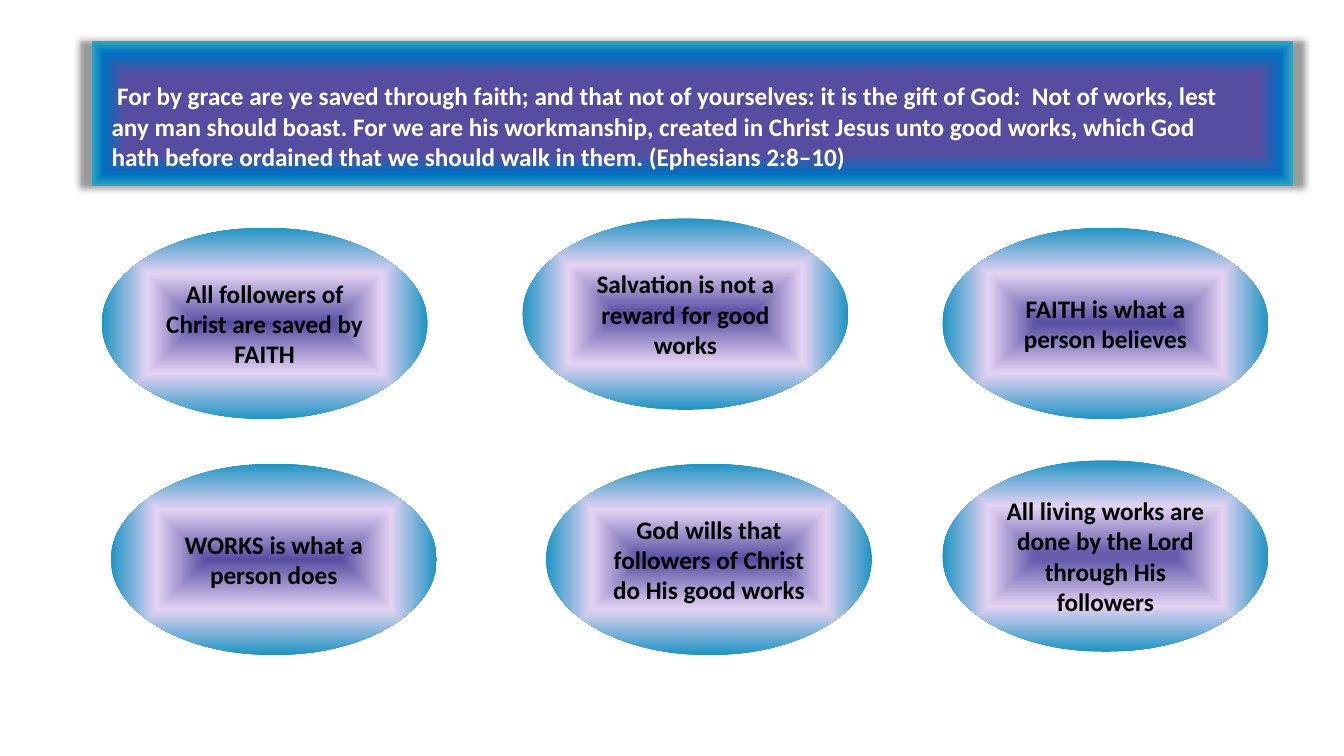
from pptx import Presentation
from pptx.dml.color import RGBColor
from pptx.enum.shapes import MSO_SHAPE as Shape
from pptx.enum.text import MSO_ANCHOR as Anchor, MSO_AUTO_SIZE as Fit, PP_ALIGN as Align
from pptx.oxml import parse_xml
from pptx.oxml.ns import nsdecls
from pptx.util import Inches, Pt

BLACK = RGBColor(0x00, 0x00, 0x00)
WHITE = RGBColor(0xFF, 0xFF, 0xFF)
VIOLET = RGBColor(0x56, 0x4D, 0xA1)
MAUVE = RGBColor(0x66, 0x5C, 0xAB)
LILAC = RGBColor(0xE4, 0xD2, 0xF2)
BLUE = RGBColor(0x00, 0x70, 0xC0)
TEAL = RGBColor(0x2F, 0xA7, 0xC4)
AZURE = RGBColor(0x1F, 0x94, 0xC3)

FRAME = [(55, VIOLET), (83, BLUE), (100, TEAL)]
GLOW = [(0, VIOLET), (52, LILAC), (100, AZURE)]
SOFT = [(4, MAUVE), (52, LILAC), (100, AZURE)]

VERSE = (
    " For by grace are ye saved through faith; and that not of yourselves: "
    "it is the gift of God:  Not of works, lest any man should boast. "
    "For we are his workmanship, created in Christ Jesus unto good works, "
    "which God hath before ordained that we should walk in them. "
    "(Ephesians 2:8–10)"
)

POINTS = [
    (1.21, 2.71, "All followers of Christ are saved by FAITH", GLOW),
    (1.32, 5.52, "WORKS is what a person does", GLOW),
    (6.5, 5.52, "God wills that followers of Christ do His good works", GLOW),
    (6.22, 2.6, "Salvation is not a reward for good works", GLOW),
    (11.22, 5.48, "All living works are done by the Lord through His followers", SOFT),
    (11.22, 2.71, "FAITH is what a person believes", GLOW),
]


class Board:
    font = "Calibri"
    size = Pt(18)
    cols = 16
    rows = 9

    def __init__(self, deck):
        self.slide = deck.slides.add_slide(deck.slide_layouts[6])
        self.col = deck.slide_width / self.cols
        self.row = deck.slide_height / self.rows

    def place(self, x, y, w, h):
        return (round(x * self.col), round(y * self.row),
                round(w * self.col), round(h * self.row))

    def letter(self, frame, text, color, align):
        frame.word_wrap = True
        par = frame.paragraphs[0]
        par.alignment = align
        run = par.add_run()
        run.text = text
        run.font.name = self.font
        run.font.size = self.size
        run.font.bold = True
        run.font.color.rgb = color

    def shade(self, shape, stops):
        marks = "".join(
            f'<a:gs pos="{pos * 1000}"><a:srgbClr val="{color}"/></a:gs>'
            for pos, color in stops)
        shape.fill.background()
        props = shape.element.spPr
        blank = props.find("{*}noFill")
        props.replace(blank, parse_xml(
            f'<a:gradFill {nsdecls("a")} rotWithShape="1"><a:gsLst>{marks}</a:gsLst>'
            '<a:path path="shape"><a:fillToRect l="50000" t="50000" r="50000" b="50000"/>'
            '</a:path></a:gradFill>'))

    def form(self, kind, box, stops):
        shape = self.slide.shapes.add_shape(kind, *self.place(*box))
        shape.shadow.inherit = False
        shape.line.fill.background()
        self.shade(shape, stops)
        return shape

    def banner(self, box):
        shape = self.form(Shape.RECTANGLE, box, FRAME)
        shape.element.spPr.find("{*}effectLst").append(parse_xml(
            f'<a:outerShdw {nsdecls("a")} blurRad="{Pt(5)}" sx="102000" sy="102000" '
            f'algn="ctr" rotWithShape="0"><a:srgbClr val="{BLACK}">'
            '<a:alpha val="40000"/></a:srgbClr></a:outerShdw>'))

    def oval(self, x, y, text, stops):
        shape = self.form(Shape.OVAL, (x, y, 3.88, 2.28), stops)
        shape.text_frame.vertical_anchor = Anchor.MIDDLE
        self.letter(shape.text_frame, text, BLACK, Align.CENTER)

    def verse(self, box, text):
        frame = self.slide.shapes.add_textbox(*self.place(*box)).text_frame
        self.letter(frame, text, WHITE, Align.LEFT)
        frame.auto_size = Fit.SHAPE_TO_FIT_TEXT


def main():
    deck = Presentation()
    deck.slide_width = Inches(13.33)
    deck.slide_height = Inches(7.5)
    board = Board(deck)
    board.banner((1.09, 0.49, 14.3, 1.73))
    for point in POINTS:
        board.oval(*point)
    board.verse((1.21, 0.9, 13.57, 1.21), VERSE)
    deck.save("out.pptx")


if __name__ == "__main__":
    main()
